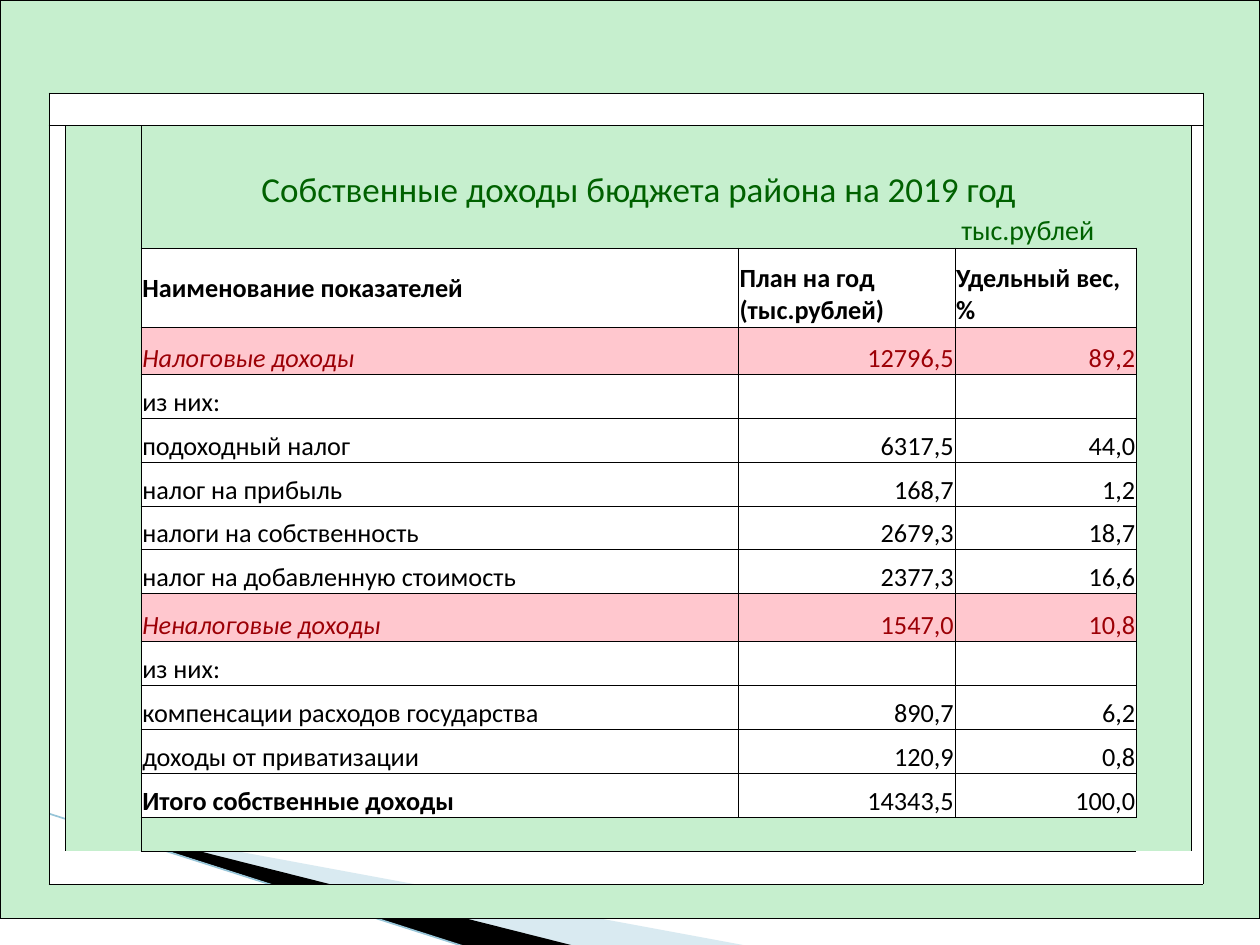
from collections import defaultdict

from lxml import etree
from pptx import Presentation
from pptx.dml.color import RGBColor
from pptx.enum.shapes import MSO_CONNECTOR
from pptx.enum.text import MSO_ANCHOR, PP_ALIGN
from pptx.oxml.ns import qn
from pptx.util import Inches, Pt

STRAIGHT = MSO_CONNECTOR.STRAIGHT
MIDDLE, BOTTOM = MSO_ANCHOR.MIDDLE, MSO_ANCHOR.BOTTOM
LEFT, CENTER, RIGHT = PP_ALIGN.LEFT, PP_ALIGN.CENTER, PP_ALIGN.RIGHT
NO_STYLE = "{2D5ABB26-0587-4C30-8999-92F81FD0307C}"
GREEN, DARK_GREEN = "C6EFCE", "006100"
PINK, DARK_RED, BLACK = "FFC7CE", "9C0006", "000000"
SIDES = {"L": (0, -1, "R"), "R": (0, 1, "L"), "T": (-1, 0, "B"), "B": (1, 0, "T")}

COLUMN_WEIGHTS = [0.39, 0.13, 0.6, 4.74, 1.72, 1.44, 0.44, 0.09, 0.45]
ROW_WEIGHTS = [0.74, 0.26, 0.27, 0.42, 0.27, 0.63, 0.38, *[0.35] * 3, 0.34, 0.35,
               0.38, *[0.35] * 4, 0.27, 0.26, 0.27]
FIRST_ROW, FIRST_COLUMN = 5, 3
HEADINGS = ["Наименование показателей", "План на год (тыс.рублей)", "Удельный вес, %"]
INCOME = [
    ("Налоговые доходы", "12796,5", "89,2"),
    ("из них:", "", ""),
    ("подоходный налог", "6317,5", "44,0"),
    ("налог на прибыль", "168,7", "1,2"),
    ("налоги на собственность", "2679,3", "18,7"),
    ("налог на добавленную стоимость", "2377,3", "16,6"),
    ("Неналоговые доходы", "1547,0", "10,8"),
    ("из них:", "", ""),
    ("компенсации расходов государства", "890,7", "6,2"),
    ("доходы от приватизации", "120,9", "0,8"),
    ("Итого собственные доходы", "14343,5", "100,0"),
]
GROUPS = ("Налоговые доходы", "Неналоговые доходы")
TOTAL = "Итого собственные доходы"


def rgb(value):
    """Turn a hex string into a colour."""
    return RGBColor.from_string(value)


class BudgetSlide:
    """Draws on one slide, with lengths in percent of the slide's size."""

    font = "Calibri"

    def __init__(self, deck):
        self.width, self.height = deck.slide_width, deck.slide_height
        self.shapes = deck.slides.add_slide(deck.slide_layouts[6]).shapes
        self.borders = defaultdict(set)

    def point(self, x, y):
        """Convert percent of the slide to lengths."""
        return round(self.width * x / 100), round(self.height * y / 100)

    def wedge(self, corners, color, alpha=100):
        """Draw a filled outline without a border."""
        start, *others = [self.point(*corner) for corner in corners]
        builder = self.shapes.build_freeform(*start)
        builder.add_line_segments(others, close=True)
        shape = builder.convert_to_shape()
        shape.shadow.inherit = False
        shape.line.fill.background()
        shape.fill.solid()
        shape.fill.fore_color.rgb = rgb(color)
        if alpha < 100:
            tint = shape._element.spPr.find(".//" + qn("a:srgbClr"))
            etree.SubElement(tint, qn("a:alpha"), val=str(alpha * 1000))

    def line(self, start, end, color, weight):
        """Draw a straight line."""
        edge = self.shapes.add_connector(STRAIGHT, *self.point(*start), *self.point(*end))
        edge.line.color.rgb = rgb(color)
        edge.line.width = Pt(weight)
        etree.SubElement(edge._element.spPr, qn("a:effectLst"))

    def table(self, columns, rows, width, height):
        """Add a plain table whose tracks share its size by weight."""
        size = self.point(width, height)
        self.grid = self.shapes.add_table(len(rows), len(columns), 0, 0, *size).table
        self.grid.first_row = self.grid.horz_banding = False
        self.grid._tbl.tblPr.find(qn("a:tableStyleId")).text = NO_STYLE
        for column, weight in zip(self.grid.columns, columns):
            column.width = round(size[0] * weight / sum(columns))
        for row, weight in zip(self.grid.rows, rows):
            row.height = round(size[1] * weight / sum(rows))
        for cell in self.grid.iter_cells():
            cell.margin_left = cell.margin_right = cell.margin_top = Inches(0.01)
            cell.margin_bottom = 0
            cell.fill.background()
            etree.SubElement(cell.text_frame.paragraphs[0]._p, qn("a:endParaRPr"), sz="1000")

    def merge(self, top, left, bottom, right):
        """Join a block of cells."""
        self.grid.cell(top, left).merge(self.grid.cell(bottom, right))

    def fill(self, row, column, color):
        """Colour one cell."""
        cell = self.grid.cell(row, column)
        cell.fill.solid()
        cell.fill.fore_color.rgb = rgb(color)

    def entry(self, row, column, text, color=BLACK, size=15, align=LEFT,
              anchor=BOTTOM, bold=False, italic=False):
        """Put formatted text into one cell."""
        cell = self.grid.cell(row, column)
        cell.vertical_anchor = anchor
        paragraph = cell.text_frame.paragraphs[0]
        paragraph.text = text
        paragraph.alignment = align
        for run in paragraph.runs:
            run.font.name, run.font.size = self.font, Pt(size)
            run.font.bold, run.font.italic = bold, italic
            run.font.color.rgb = rgb(color)

    def edge(self, row, column, side):
        """Mark one side of a cell and the facing side of its neighbour."""
        down, across, facing = SIDES[side]
        self.borders[row, column].add(side)
        self.borders[row + down, column + across].add(facing)

    def box(self, top, left, bottom, right, sides="LRTB"):
        """Mark the chosen sides of a block of cells."""
        for row in range(top, bottom + 1):
            for column in range(left, right + 1):
                outer = {"L": column == left, "R": column == right,
                         "T": row == top, "B": row == bottom}
                for side in sides:
                    if outer[side]:
                        self.edge(row, column, side)

    def draw_borders(self, color=BLACK, weight=0.5):
        """Draw every marked cell side."""
        for row in range(len(self.grid.rows)):
            for column in range(len(self.grid.columns)):
                properties = self.grid.cell(row, column)._tc.get_or_add_tcPr()
                marked = [side for side in SIDES if side in self.borders[row, column]]
                for place, side in enumerate(marked):
                    border = etree.Element(qn("a:ln" + side), w=str(Pt(weight)))
                    paint = etree.SubElement(border, qn("a:solidFill"))
                    etree.SubElement(paint, qn("a:srgbClr"), val=color)
                    properties.insert(place, border)


def main():
    """Build the district income slide."""
    deck = Presentation()
    deck.slide_width, deck.slide_height = Inches(10), Inches(7.5)
    slide = BudgetSlide(deck)
    slide.wedge([(5.5, 86.8), (59.5, 100.13), (45.6, 100.13), (5.5, 86.67)], "A0CBDC", 40)
    slide.wedge([(5.3, 86.53), (45.7, 100.13), (37.2, 100.27), (5.4, 86.67)], BLACK)
    slide.line((-0.1, 84.4), (37.1, 100.27), "97C5D8", 0.95)

    slide.table(COLUMN_WEIGHTS, ROW_WEIGHTS, 100, 97)
    last_row, last_column = len(ROW_WEIGHTS) - 1, len(COLUMN_WEIGHTS) - 1
    end_row, end_column = FIRST_ROW + len(INCOME), FIRST_COLUMN + len(HEADINGS) - 1
    for row in range(last_row + 1):
        for column in range(last_column + 1):
            margin = row in (0, last_row) or column in (0, last_column)
            panel = 2 <= row <= last_row - 2 and 2 <= column <= last_column - 2
            data = FIRST_ROW <= row <= end_row and FIRST_COLUMN <= column <= end_column
            if margin or panel and not data:
                slide.fill(row, column, GREEN)
            if data:
                slide.box(row, column, row, column)
    for row in (1, last_row - 1):
        slide.merge(row, 1, row, last_column - 1)
        slide.edge(row, 1, "R")
    for column in (1, last_column - 1):
        slide.merge(2, column, last_row - 2, column)
    slide.merge(3, FIRST_COLUMN, 3, end_column)
    slide.box(0, 0, last_row, last_column)
    slide.box(1, 1, last_row - 1, last_column - 1)
    slide.box(2, 2, last_row - 2, last_column - 2, "LR")

    slide.entry(3, FIRST_COLUMN, "Собственные доходы бюджета района на 2019 год",
                DARK_GREEN, 20, CENTER)
    slide.entry(4, end_column, "тыс.рублей", DARK_GREEN, 16)
    slide.grid.cell(4, end_column).margin_left = Inches(0.05)
    for column, heading in enumerate(HEADINGS, FIRST_COLUMN):
        anchor = MIDDLE if column == FIRST_COLUMN else BOTTOM
        slide.entry(FIRST_ROW, column, heading, anchor=anchor, bold=True)
    for row, income in enumerate(INCOME, FIRST_ROW + 1):
        group = income[0] in GROUPS
        for column, text in enumerate(income, FIRST_COLUMN):
            label = column == FIRST_COLUMN
            if group:
                slide.fill(row, column, PINK)
            if text:
                slide.entry(row, column, text, DARK_RED if group else BLACK,
                            align=LEFT if label else RIGHT,
                            bold=text == TOTAL, italic=group and label)
    slide.draw_borders()
    deck.save("out.pptx")


if __name__ == "__main__":
    main()
